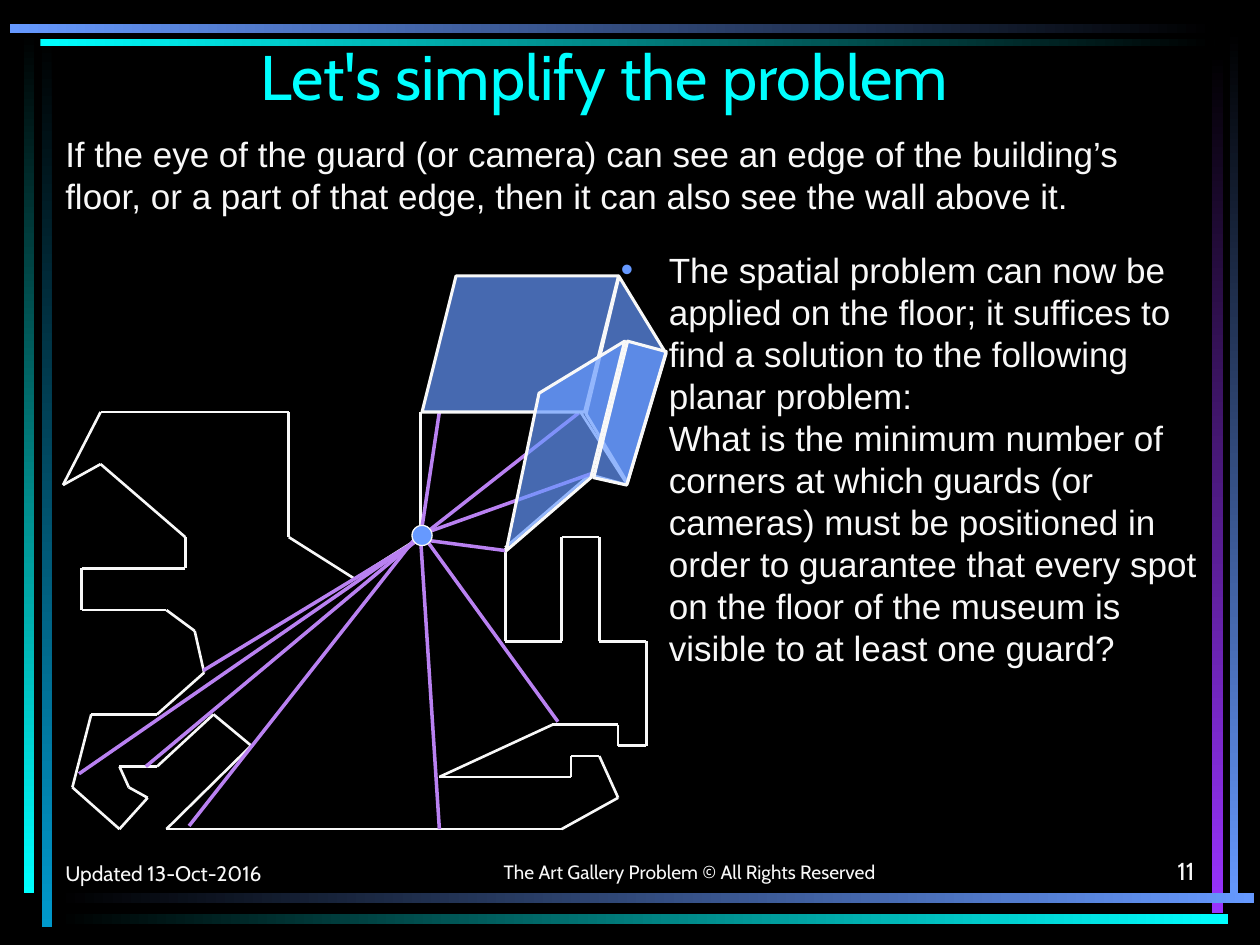
from itertools import pairwise

from lxml.etree import SubElement
from pptx import Presentation
from pptx.dml.color import RGBColor
from pptx.enum.shapes import MSO_CONNECTOR, MSO_SHAPE as Shape
from pptx.enum.text import MSO_ANCHOR as Anchor, PP_ALIGN as Align
from pptx.oxml.ns import qn
from pptx.util import Inches, Pt

WIDTH, HEIGHT = 10, 7.5
COLORS = {
    "black": "000000", "white": "F8F8F8", "cyan": "00FFFF", "blue": "6699FF",
    "teal": "0099CC", "violet": "9933FF", "lilac": "B981F1",
}

# Floor plan grid: origin and size of one cell, in inches
GRID_LEFT, GRID_TOP = 0.5, 3.27
COLUMN, ROW = 4.63 / 62, 3.31 / 40

# Frame bars: left, top, width, height, first colour, last colour
BARS = [
    (0.33, 0.28, 0.08, 7.08, "black", "teal"),
    (0.19, 0.25, 0.08, 6.84, "black", "cyan"),
    (9.76, 0.24, 0.07, 6.93, "black", "blue"),
    (9.62, 0.42, 0.09, 6.83, "black", "violet"),
    (0.45, 7.09, 9.5, 0.08, "black", "blue"),
    (0.45, 7.25, 9.3, 0.08, "black", "cyan"),
    (0.32, 0.31, 9.32, 0.06, "cyan", "black"),
    (0.08, 0.19, 9.56, 0.07, "blue", "black"),
]

# Corners of the museum floor as (column, row)
WALLS = [
    (11, 40), (53, 40), (59, 37), (57, 33), (54, 33), (54, 35), (40, 35),
    (52, 30), (59, 30), (59, 32), (62, 32), (62, 22), (57, 22), (57, 12),
    (53, 12), (53, 22), (47, 22), (47, 13), (56, 6), (60, 7), (55, 0),
    (38, 0), (38, 12), (31, 16), (24, 12), (24, 0), (4, 0), (0, 7), (4, 5),
    (13, 12), (13, 15), (2, 15), (2, 19), (11, 19), (14, 21), (15, 25),
    (10, 29), (3, 29), (1, 36), (6, 40), (9, 37), (7, 36), (6, 34), (10, 34),
    (16, 29), (20, 32), (11, 40),
]
SIGHT_LINES = [
    ((37.8, 12.2), (47.1, 13.3)), ((38.4, 12), (52.6, 29.7)),
    ((38.2, 11.7), (56.2, 5.9)), ((38, 12), (54.8, 0.1)),
    ((38, 12), (40, 40)), ((37.9, 12.2), (14.9, 24.8)),
    ((38.4, 11.7), (8.8, 34)), ((37.8, 11.7), (13.4, 39.7)),
    ((37.6, 12.3), (1.7, 34.7)), ((38, 12), (40, 0)),
]
SIDE_WALLS = [
    [(55.6, 0.2), (59.1, -13), (64.1, -5.6), (60, 6.8)],
    [(56.4, 6.3), (60, -6.8), (64.1, -5.8), (59.9, 7)],
    [(47.1, 13.3), (50.6, -1.8), (59.7, -6.8), (56.1, 6.3)],
]
BACK_WALL = (3.35, 2.19, 1.56, 1.08)
GUARD = (3.27, 4.17, 0.16, 0.16)

INTRO = ("If the eye of the guard (or camera) can see an edge of the building’s "
         "floor, or a part of that edge, then it can also see the wall above it.")
BODY = [
    "The spatial problem can now be applied on the floor; it suffices to find "
    "a solution to the following planar problem:",
    "What is the minimum number of corners at which guards (or cameras) must be "
    "positioned in order to guarantee that every spot on the floor of the "
    "museum is visible to at least one guard?",
]
READING = {"size": 20, "font": "Arial", "spacing": 24}
FOOTER = {"anchor": Anchor.BOTTOM}
TEXTS = [
    ((0.42, 0.25, 8.75, 0.92), ["Let's simplify the problem"],
     {"size": 36, "color": "cyan", "align": Align.CENTER}),
    ((4.83, 1.92, 4.83, 4.95), BODY, {**READING, "indent": 0.38}),
    ((0.42, 1, 9.17, 0.77), [INTRO], READING),
    ((0.42, 6.58, 2.08, 0.5), ["Updated 13-Oct-2016"], {"size": 12, **FOOTER}),
    ((2.92, 6.56, 5.11, 0.5), ["The Art Gallery Problem © All Rights Reserved"],
     {"size": 11, "align": Align.CENTER, **FOOTER}),
    ((7.5, 6.58, 2.08, 0.5), ["11"],
     {"size": 14, "align": Align.RIGHT, **FOOTER}),
]


def rgb(name):
    return RGBColor.from_string(COLORS[name])


def grid_point(column, row):
    return Inches(GRID_LEFT + column * COLUMN), Inches(GRID_TOP + row * ROW)


def add_preset(slide, kind, box):
    shape = slide.shapes.add_shape(kind, *map(Inches, box))
    shape.shadow.inherit = False
    return shape


def add_bar(slide, *box, first, last):
    bar = add_preset(slide, Shape.RECTANGLE, box)
    bar.line.fill.background()
    bar.fill.gradient()
    bar.fill.gradient_angle = 0 if bar.width > bar.height else 270
    for stop, color in zip(bar.fill.gradient_stops, (first, last)):
        stop.color.rgb = rgb(color)


def add_line(slide, start, end, color, width):
    line = slide.shapes.add_connector(
        MSO_CONNECTOR.STRAIGHT, *grid_point(*start), *grid_point(*end))
    line.line.color.rgb = rgb(color)
    line.line.width = Pt(width)
    SubElement(line._element.spPr, qn("a:effectLst"))


def paint(shape, width, opacity=100):
    """Fill a shape blue, with a white outline."""
    shape.fill.solid()
    shape.fill.fore_color.rgb = rgb("blue")
    shape.line.color.rgb = rgb("white")
    shape.line.width = Pt(width)
    if opacity < 100:
        color = shape._element.spPr.find(qn("a:solidFill"))[0]
        SubElement(color, qn("a:alpha"), val=str(opacity * 1000))


def add_side_wall(slide, corners):
    start, *others = [grid_point(*corner) for corner in corners]
    builder = slide.shapes.build_freeform(*start, scale=1.0)
    builder.add_line_segments(others, close=True)
    wall = builder.convert_to_shape()
    wall.shadow.inherit = False
    paint(wall, 1.75, 69)


def add_bullet(paragraph, indent):
    properties = paragraph._p.get_or_add_pPr()
    properties.set("indent", str(-Inches(indent)))
    color = SubElement(properties, qn("a:buClr"))
    SubElement(color, qn("a:srgbClr"), val=COLORS["blue"])
    SubElement(properties, qn("a:buFont"), typeface="Arial")
    SubElement(properties, qn("a:buChar"), char="•")


def add_text(slide, box, lines, *, size, font="Cabin", color="white",
             align=Align.LEFT, anchor=Anchor.TOP, spacing=None, indent=0):
    """Add a text box; with an indent, its first paragraph gets a bullet."""
    frame = slide.shapes.add_textbox(*map(Inches, box)).text_frame
    frame.word_wrap = True
    frame.vertical_anchor = anchor
    frame.text = "\n".join(lines)
    for paragraph in frame.paragraphs:
        paragraph.alignment = align
        if spacing:
            paragraph.line_spacing = Pt(spacing)
        paragraph._p.get_or_add_pPr().set("marL", str(Inches(indent)))
        paragraph.runs[0].font.size = Pt(size)
        paragraph.runs[0].font.name = font
        paragraph.runs[0].font.color.rgb = rgb(color)
    if indent:
        add_bullet(frame.paragraphs[0], indent)


def main():
    presentation = Presentation()
    presentation.slide_width, presentation.slide_height = Inches(WIDTH), Inches(HEIGHT)
    slide = presentation.slides.add_slide(presentation.slide_layouts[6])
    slide.background.fill.solid()
    slide.background.fill.fore_color.rgb = rgb("black")

    for *box, first, last in BARS:
        add_bar(slide, *box, first=first, last=last)
    for box, lines, style in TEXTS:
        add_text(slide, box, lines, **style)
    for start, end in pairwise(WALLS):
        add_line(slide, start, end, "white", 1.5)
    for start, end in SIGHT_LINES:
        add_line(slide, start, end, "lilac", 2)
    paint(add_preset(slide, Shape.PARALLELOGRAM, BACK_WALL), 1.75, 69)
    for corners in SIDE_WALLS:
        add_side_wall(slide, corners)
    paint(add_preset(slide, Shape.OVAL, GUARD), 0.75)

    presentation.save("out.pptx")


if __name__ == "__main__":
    main()
